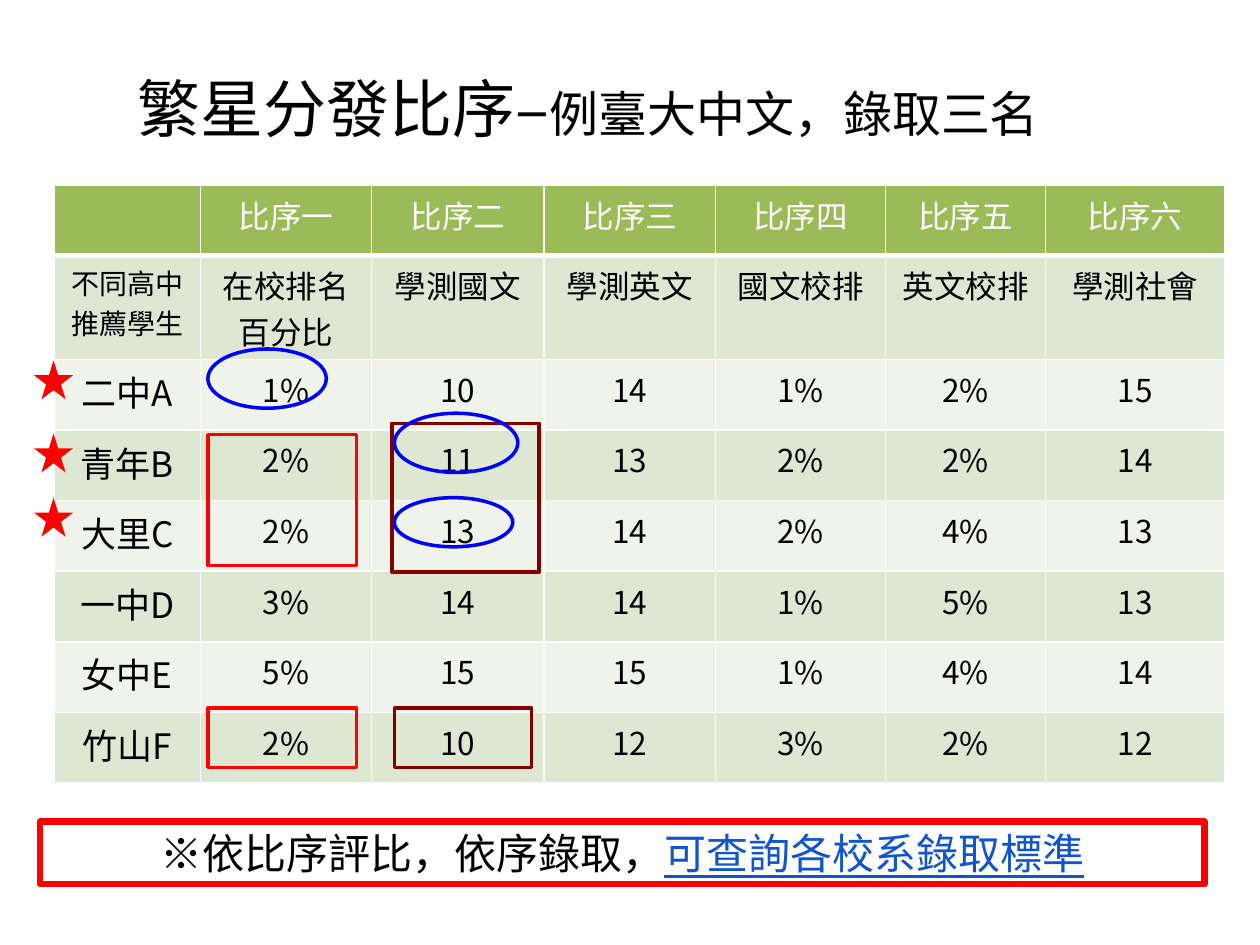
from lxml.etree import SubElement
from pptx import Presentation
from pptx.dml.color import RGBColor
from pptx.enum.shapes import MSO_SHAPE as SHAPE
from pptx.enum.text import MSO_ANCHOR as ANCHOR, MSO_AUTO_SIZE as AUTO, PP_ALIGN as ALIGN
from pptx.oxml.ns import qn
from pptx.util import Inches, Pt

CJK = "Noto Sans CJK JP"
RED, MAROON, BLUE = "FF0000", "800000", "0000FF"
HEADER_FILL, BANDS = "9BBB59", ("EFF3EA", "DEE7D1")

COL_WIDTHS = [1.16, 1.36, 1.37, 1.36, 1.35, 1.27, 1.42]
ROW_HEIGHTS = [0.56, 0.81] + [0.56] * 6
ROWS = [
    ["", "比序一", "比序二", "比序三", "比序四", "比序五", "比序六"],
    ["不同高中\n推薦學生", "在校排名百分比", "學測國文", "學測英文",
     "國文校排", "英文校排", "學測社會"],
    ["二中A", "1%", "10", "14", "1%", "2%", "15"],
    ["青年B", "2%", "11", "13", "2%", "2%", "14"],
    ["大里C", "2%", "13", "14", "2%", "4%", "13"],
    ["一中D", "3%", "14", "14", "1%", "5%", "13"],
    ["女中E", "5%", "15", "15", "1%", "4%", "14"],
    ["竹山F", "2%", "10", "12", "3%", "2%", "12"],
]


def rgb(value):
    return RGBColor.from_string(value)


def add_run(p, text, size=18, font=CJK, color="000000", underline=False):
    p.alignment = ALIGN.CENTER
    r = p.add_run()
    r.text = text
    r.font.size, r.font.name = Pt(size), font
    r.font.bold, r.font.underline = False, underline
    r.font.color.rgb = rgb(color)
    # East Asian characters take their own typeface
    SubElement(r.font._element, qn("a:ea"), typeface=font)


def setup_frame(tf):
    tf.word_wrap = True
    tf.auto_size = AUTO.NONE
    tf.vertical_anchor = ANCHOR.MIDDLE
    tf.margin_top = tf.margin_bottom = 0


def add_shape(slide, kind, box, fill=None, line=None, width=2):
    sp = slide.shapes.add_shape(kind, *map(Inches, box))
    sp.shadow.inherit = False
    if fill:
        sp.fill.solid()
        sp.fill.fore_color.rgb = rgb(fill)
    else:
        sp.fill.background()
    if line:
        sp.line.color.rgb = rgb(line)
        sp.line.width = Pt(width)
    else:
        sp.line.fill.background()
    return sp


def set_borders(cell, top=1, bottom=1):
    tc_pr = cell._tc.get_or_add_tcPr()
    for side, width in (("L", 1), ("R", 1), ("T", top), ("B", bottom)):
        ln = SubElement(tc_pr, qn(f"a:ln{side}"), w=str(Pt(width)))
        fill = SubElement(ln, qn("a:solidFill"))
        SubElement(fill, qn("a:srgbClr"), val="FFFFFF")


def add_title(slide):
    title = slide.shapes.title
    title.left, title.top, title.width, title.height = map(Inches, (0.47, 0.5, 8.4, 0.7))
    setup_frame(title.text_frame)
    p = title.text_frame.paragraphs[0]
    add_run(p, "繁星分發比序", size=36)
    add_run(p, "–", size=36, font="Noto Sans CJK SC")
    add_run(p, "例臺大中文，錄取三名", size=28)


def add_ranking_table(slide):
    frame = slide.shapes.add_table(len(ROWS), len(COL_WIDTHS), Inches(0.43), Inches(1.47),
                                   Inches(sum(COL_WIDTHS)), Inches(sum(ROW_HEIGHTS)))
    table = frame.table
    for col, width in zip(table.columns, COL_WIDTHS):
        col.width = Inches(width)
    for i, (row, height) in enumerate(zip(ROWS, ROW_HEIGHTS)):
        table.rows[i].height = Inches(height)
        for j, text in enumerate(row):
            cell = table.cell(i, j)
            # Thick rule under the header row
            set_borders(cell, top=3 if i == 1 else 1, bottom=3 if i == 0 else 1)
            cell.fill.solid()
            cell.fill.fore_color.rgb = rgb(BANDS[i % 2] if i else HEADER_FILL)
            size = 18 if j or not i else 16 if i == 1 else 20
            tf = cell.text_frame
            for n, part in enumerate(text.split("\n") if text else []):
                p = tf.add_paragraph() if n else tf.paragraphs[0]
                add_run(p, part, size=size, color="000000" if i else "FFFFFF")


def add_marks(slide):
    # Stars beside admitted students
    for top in (2.86, 3.44, 3.95):
        add_shape(slide, SHAPE.STAR_5_POINT, (0.27, top, 0.31, 0.31), fill=RED)
    # Frames around tied scores
    for box, color in (
        ((1.65, 3.45, 1.18, 1.04), RED),
        ((1.65, 5.62, 1.18, 0.47), RED),
        ((3.11, 3.36, 1.17, 1.18), MAROON),
        ((3.13, 5.62, 1.09, 0.47), MAROON),
    ):
        add_shape(slide, SHAPE.RECTANGLE, box, line=color)
    # Circles around deciding scores
    for box in ((1.65, 2.77, 0.94, 0.47), (3.13, 3.28, 0.98, 0.47), (3.13, 3.95, 0.94, 0.39)):
        add_shape(slide, SHAPE.OVAL, box, line=BLUE)


def add_note(slide):
    sp = add_shape(slide, SHAPE.RECTANGLE, (0.32, 6.52, 9.24, 0.5),
                   fill="FFFFFF", line=RED, width=3.5)
    setup_frame(sp.text_frame)
    p = sp.text_frame.paragraphs[0]
    add_run(p, "※依比序評比，依序錄取，", size=24, font="Courier New")
    add_run(p, "可查詢各校系錄取標準", size=24, font="Courier New",
            color="1155CC", underline=True)


def main():
    prs = Presentation()
    prs.slide_width, prs.slide_height = Inches(10), Inches(7.5)
    slide = prs.slides.add_slide(prs.slide_layouts[5])
    add_title(slide)
    add_ranking_table(slide)
    add_marks(slide)
    add_note(slide)
    prs.save("out.pptx")


if __name__ == "__main__":
    main()
